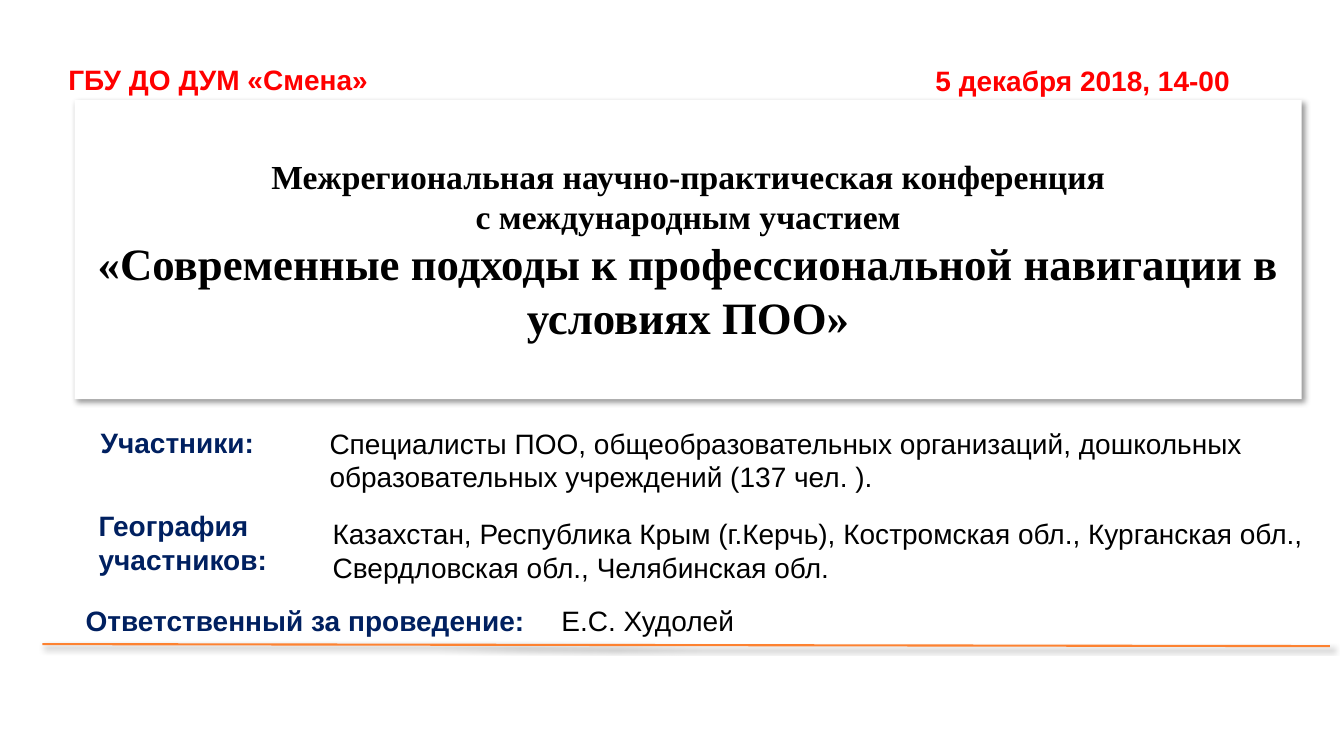
from copy import deepcopy

from lxml import etree
from pptx import Presentation, util as u
from pptx.dml.color import RGBColor
from pptx.enum import shapes, text
from pptx.oxml import parse_xml
from pptx.oxml.ns import nsdecls, qn

PX = 9144  # 100 px to the inch
COLORS = {"ink": "000000", "paper": "FFFFFF", "red": "FF0000",
          "navy": "002060", "orange": "FD8231"}


class Page:
    def __init__(self, deck, font, size):
        self.slide = deck.slides.add_slide(deck.slide_layouts[0])
        self.font, self.size = font, size

    def color(self, name):
        return RGBColor.from_string(COLORS[name])

    def style(self, run, font, size, color, bold):
        run.font.name, run.font.size = font, u.Pt(size)
        run.font.bold = bold
        run.font.color.rgb = self.color(color)

    def shade(self, shape):
        """Add a soft shadow towards the lower right."""
        shape._element.spPr.append(parse_xml(
            f'<a:effectLst {nsdecls("a")}>'
            f'<a:outerShdw blurRad="{u.Pt(4)}" dist="{u.Pt(3)}" dir="2700000" '
            'algn="tl" rotWithShape="0"><a:srgbClr val="000000">'
            '<a:alpha val="40000"/></a:srgbClr></a:outerShdw></a:effectLst>'))

    def title(self, box, lines, sizes, font):
        shape = self.slide.shapes.title
        shape.left, shape.top, shape.width, shape.height = (n * PX for n in box)
        shape.fill.solid()
        shape.fill.fore_color.rgb = self.color("paper")
        self.shade(shape)
        frame = shape.text_frame
        frame.text = "\v".join(lines)
        frame.word_wrap = True
        frame.auto_size = text.MSO_AUTO_SIZE.NONE
        frame.vertical_anchor = text.MSO_ANCHOR.MIDDLE
        para = frame.paragraphs[0]
        para.alignment = text.PP_ALIGN.CENTER
        for run, size in zip(para.runs, sizes):
            self.style(run, font, size, "ink", True)
        # Line breaks take the size of the text before them.
        for gap in para._p.findall(qn("a:br")):
            gap.append(deepcopy(gap.getprevious().find(qn("a:rPr"))))

    def label(self, box, words, color="ink", wrap=True):
        shape = self.slide.shapes.add_textbox(*(n * PX for n in box))
        frame = shape.text_frame
        frame.text = words
        frame.word_wrap = wrap
        frame.auto_size = text.MSO_AUTO_SIZE.SHAPE_TO_FIT_TEXT
        for para in frame.paragraphs:
            for run in para.runs:
                self.style(run, self.font, self.size, color, color != "ink")

    def rule(self, ends, color, width):
        line = self.slide.shapes.add_connector(
            shapes.MSO_CONNECTOR.STRAIGHT, *(n * PX for n in ends))
        line.line.color.rgb = self.color(color)
        line.line.width = u.Pt(width)
        self.shade(line)

    def prune(self):
        """Remove the placeholders left empty."""
        for shape in list(self.slide.placeholders):
            if not shape.text_frame.text:
                shape._element.getparent().remove(shape._element)


def main():
    deck = Presentation()
    deck.slide_width, deck.slide_height = 1333 * PX, 750 * PX
    page = Page(deck, "Arial", 20)
    page.title((74, 99, 1217, 297),
               ("Межрегиональная научно-практическая конференция",
                "с международным участием",
                "«Современные подходы к профессиональной навигации в условиях ПОО»"),
               (24, 24, 32), "Times New Roman")
    page.prune()
    page.rule((42, 639, 1319, 641), "orange", 1.5)

    page.label((58, 57, 320, 44), "ГБУ ДО ДУМ «Смена»", "red", False)
    page.label((918, 58, 314, 44), "5 декабря 2018, 14-00", "red", False)

    page.label((90, 417, 174, 44), "Участники:", "navy", False)
    page.label((317, 418, 1070, 77),
               "Специалисты ПОО, общеобразовательных организаций, дошкольных "
               "образовательных учреждений (137 чел. ).")
    page.label((88, 500, 188, 77), "География\nучастников:", "navy", False)
    page.label((320, 508, 1069, 77),
               "Казахстан, Республика Крым (г.Керчь), Костромская обл., "
               "Курганская обл.,\nСвердловская обл., Челябинская обл.")
    page.label((75, 594, 497, 44), "Ответственный за проведение:", "navy")
    page.label((547, 594, 529, 44), "Е.С. Худолей")
    deck.save("out.pptx")


if __name__ == "__main__":
    main()
